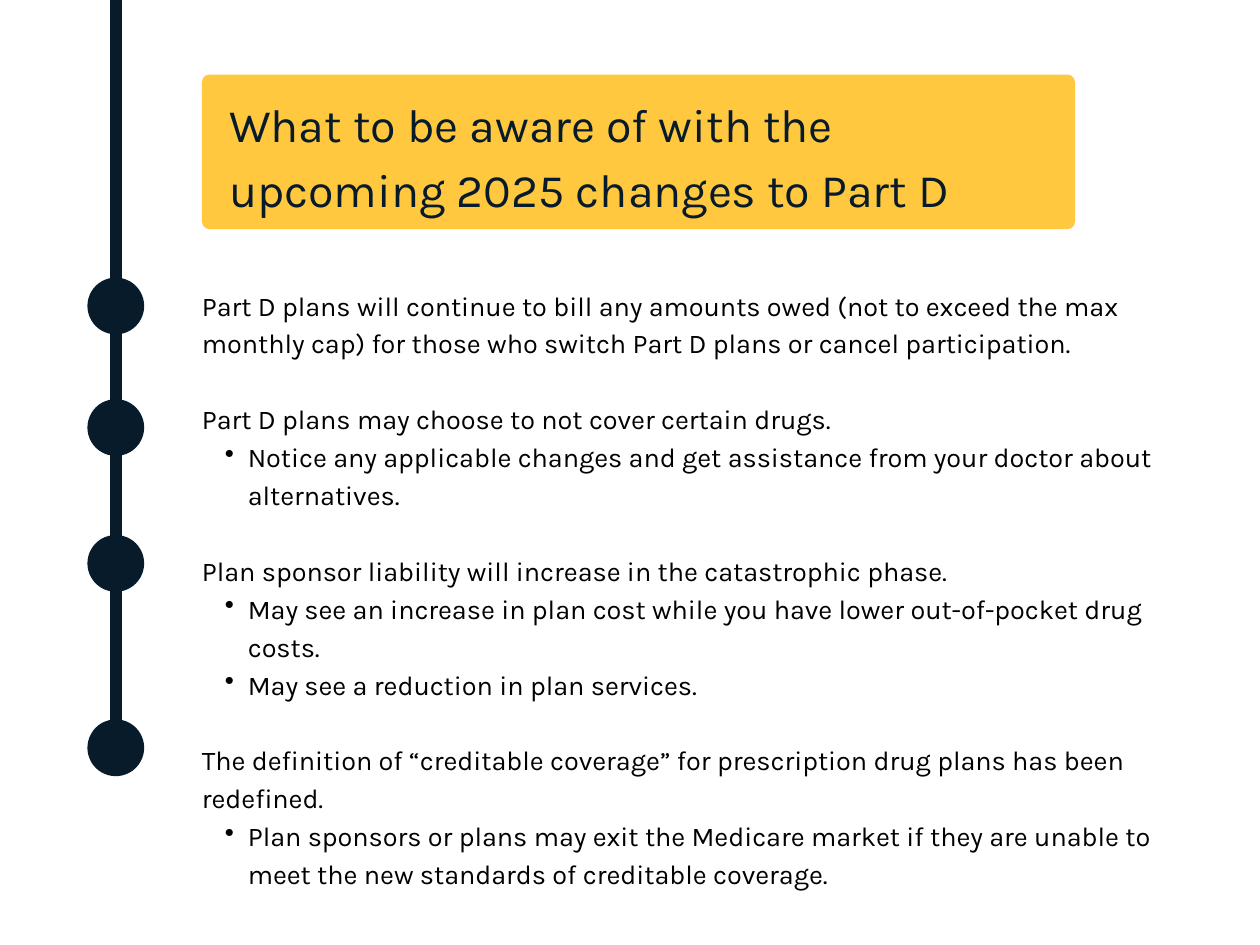
from lxml import etree
from pptx import Presentation
from pptx import util as u
from pptx.dml.color import RGBColor
from pptx.enum import shapes, text
from pptx.oxml.ns import qn

NAVY = RGBColor(0x08, 0x1B, 0x2B)
YELLOW = RGBColor(0xFF, 0xC8, 0x3F)
BLACK = RGBColor(0, 0, 0)

HEADING = "What to be aware of with the upcoming 2025 changes to Part D"
POINTS = [
    ("Part D plans will continue to bill any amounts owed (not to exceed the max "
     "monthly cap) for those who switch Part D plans or cancel participation.", []),
    ("Part D plans may choose to not cover certain drugs.",
     ["Notice any applicable changes and get assistance from your doctor about alternatives."]),
    ("Plan sponsor liability will increase in the catastrophic phase.",
     ["May see an increase in plan cost while you have lower out-of-pocket drug costs.",
      "May see a reduction in plan services."]),
    ("The definition of “creditable coverage” for prescription drug plans has been redefined.",
     ["Plan sponsors or plans may exit the Medicare market if they are unable to "
      "meet the new standards of creditable coverage."]),
]

TIMELINE_X = 70.6
DOT_SIZE = 34.6
DOT_CENTERS = [186.5, 260.6, 343.4, 455.8]
BANNER = (123.1, 45.4, 532.4, 94.3)
HEADING_BOX = (139.7, 52.6, 499.7, 76.3)
POINTS_BOX = (123.1, 172.8, 606.2, 372)
LINE_HEIGHT = 23.1

HEADING_FONT = dict(name="Karla", size=u.Pt(28.4), bold=False)
POINT_FONT = dict(name="Karla", size=u.Pt(16.5))
FRAME = dict(margin_left=0, margin_top=0, margin_right=0, margin_bottom=0, word_wrap=True,
             vertical_anchor=text.MSO_ANCHOR.TOP, auto_size=text.MSO_AUTO_SIZE.NONE)


def apply(target, values):
    for name, value in values.items():
        setattr(target, name, value)


def points(lengths):
    return [u.Pt(length) for length in lengths]


def add_filled(kind, box, color):
    filled = slide.shapes.add_shape(kind, *points(box))
    filled.shadow.inherit = False
    filled.fill.solid()
    filled.fill.fore_color.rgb = color
    filled.line.fill.background()
    return filled


def style(paragraph, font, color, spacing, before=0):
    apply(paragraph, dict(line_spacing=u.Pt(spacing), space_before=u.Pt(before),
                          alignment=text.PP_ALIGN.LEFT))
    apply(paragraph.font, font)
    paragraph.font.color.rgb = color


def add_bullet(paragraph):
    properties = paragraph._p.get_or_add_pPr()
    properties.set("marL", str(u.Pt(28)))
    properties.set("indent", str(u.Pt(-14)))
    etree.SubElement(properties, qn("a:buChar")).set("char", "•")


deck = Presentation()
deck.slide_width, deck.slide_height = points((768.24, 576))
slide = deck.slides.add_slide(deck.slide_layouts[5])

timeline = slide.shapes.add_connector(
    shapes.MSO_CONNECTOR.STRAIGHT,
    *points((TIMELINE_X, DOT_CENTERS[-1], TIMELINE_X, 0)))
timeline.line.color.rgb = NAVY
timeline.line.width = u.Pt(7.5)
etree.SubElement(timeline._element.spPr, qn("a:effectLst"))

for center in DOT_CENTERS:
    dot_box = (TIMELINE_X - DOT_SIZE / 2, center - DOT_SIZE / 2, DOT_SIZE, DOT_SIZE)
    add_filled(shapes.MSO_SHAPE.OVAL, dot_box, NAVY)

banner = add_filled(shapes.MSO_SHAPE.ROUNDED_RECTANGLE, BANNER, YELLOW)
banner.adjustments[0] = 0.05

heading = slide.shapes.title
apply(heading, dict(zip(("left", "top", "width", "height"), points(HEADING_BOX))))
heading.text_frame.text = HEADING
apply(heading.text_frame, FRAME)
style(heading.text_frame.paragraphs[0], HEADING_FONT, NAVY, 39.8)
banner._element.addnext(heading._element)

body = slide.shapes.add_textbox(*points(POINTS_BOX)).text_frame
apply(body, FRAME)
for number, (statement, details) in enumerate(POINTS):
    lead = body.add_paragraph() if number else body.paragraphs[0]
    lead.text = statement
    style(lead, POINT_FONT, BLACK, LINE_HEIGHT, LINE_HEIGHT if number else 0)
    for sentence in details:
        detail = body.add_paragraph()
        detail.text = sentence
        detail.level = 1
        add_bullet(detail)
        style(detail, POINT_FONT, BLACK, LINE_HEIGHT)

deck.save("out.pptx")
